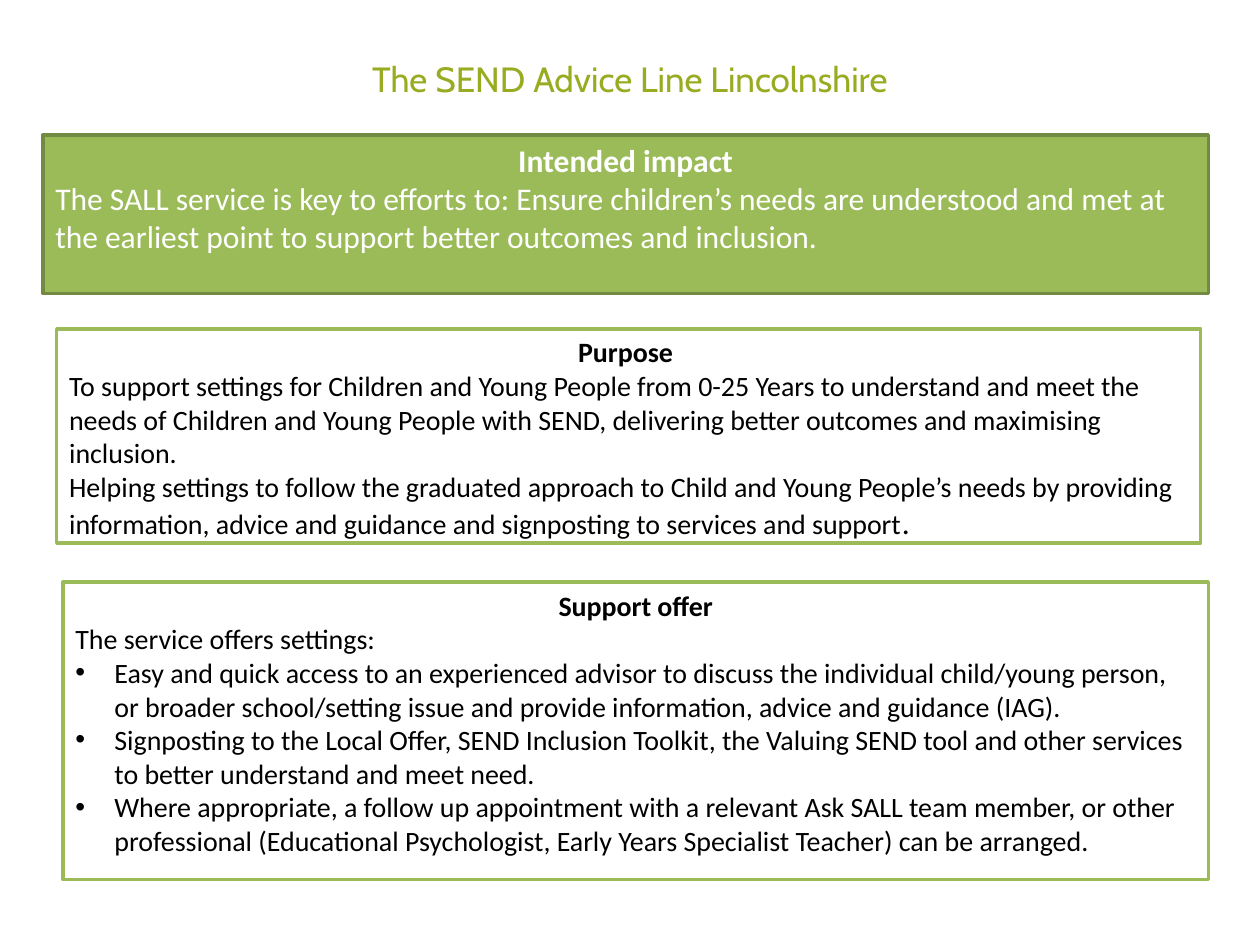
from lxml.etree import SubElement
from pptx import Presentation
from pptx.dml.color import RGBColor
from pptx.enum.shapes import MSO_SHAPE
from pptx.enum.text import MSO_ANCHOR, PP_ALIGN
from pptx.oxml.ns import qn
from pptx.util import Inches, Pt

# Content
TITLE = "The SEND Advice Line Lincolnshire"
GREEN, DARK_GREEN, TITLE_GREEN = "9BBB59", "738A42", "99AB21"
WHITE, BLACK = "FFFFFF", "000000"
BULLET_INDENT = 0.31

PANELS = [
    {
        "box": (0.45, 2.61, 9.08, 1.7), "fill": WHITE, "line": GREEN,
        "color": BLACK, "size": 16, "heading": "Purpose ",
        "body": [
            "To support settings for Children and Young People from 0-25 Years to "
            "understand and meet the needs of Children and Young People with SEND, "
            "delivering better outcomes and maximising inclusion.",
            "Helping settings to follow the graduated approach to Child and Young "
            "People’s needs by providing information, advice and guidance and "
            "signposting to services and support",
        ],
        "ending": (".", 18),
        "bullets": [],
    },
    {
        "box": (0.5, 4.62, 9.09, 2.36), "fill": WHITE, "line": GREEN,
        "color": BLACK, "size": 16, "heading": "Support offer",
        "body": ["The service offers settings:"],
        "bullets": [
            "Easy and quick access to an experienced advisor to discuss the "
            "individual child/young person, or broader school/setting issue and "
            "provide information, advice and guidance (IAG).",
            "Signposting to the Local Offer, SEND Inclusion Toolkit, the Valuing "
            "SEND tool and other services to better understand and meet need.",
            "Where appropriate, a follow up appointment with a relevant Ask SALL "
            "team member, or other professional (Educational Psychologist, Early "
            "Years Specialist Teacher) can be arranged.",
        ],
    },
    {
        "box": (0.34, 1.07, 9.25, 1.26), "fill": GREEN, "line": DARK_GREEN,
        "color": WHITE, "size": 18, "heading": "Intended impact",
        "body": [
            "The SALL service is key to efforts to: Ensure children’s needs are "
            "understood and met at the earliest point to support better outcomes "
            "and inclusion.",
        ],
        "bullets": [],
    },
]


def rgb(value):
    return RGBColor.from_string(value)


def add_run(paragraph, text, *, size, color, font="Calibri", bold=False):
    run = paragraph.add_run()
    run.text = text
    run.font.name = font
    run.font.size = Pt(size)
    run.font.bold = bold
    run.font.color.rgb = rgb(color)


def add_text(frame, text, *, align=PP_ALIGN.LEFT, bullet=False, **run_format):
    """Fill the first paragraph if it is free, otherwise append one."""
    paragraph = frame.paragraphs[0]
    if paragraph.runs:
        paragraph = frame.add_paragraph()
    paragraph.alignment = align
    if bullet:
        properties = paragraph._p.get_or_add_pPr()
        properties.set("marL", str(Inches(BULLET_INDENT)))
        properties.set("indent", str(-Inches(BULLET_INDENT)))
        SubElement(properties, qn("a:buFont")).set("typeface", "Arial")
        SubElement(properties, qn("a:buChar")).set("char", "•")
    add_run(paragraph, text, **run_format)
    return paragraph


def add_panel(slide, panel):
    shape = slide.shapes.add_shape(MSO_SHAPE.RECTANGLE, *map(Inches, panel["box"]))
    shape.shadow.inherit = False
    shape.fill.solid()
    shape.fill.fore_color.rgb = rgb(panel["fill"])
    shape.line.color.rgb = rgb(panel["line"])
    shape.line.width = Pt(2)

    frame = shape.text_frame
    frame.word_wrap = True
    frame.vertical_anchor = MSO_ANCHOR.TOP
    style = {"size": panel["size"], "color": panel["color"]}
    add_text(frame, panel["heading"], align=PP_ALIGN.CENTER, bold=True, **style)
    for text in panel["body"]:
        paragraph = add_text(frame, text, **style)
    if "ending" in panel:
        text, size = panel["ending"]
        add_run(paragraph, text, size=size, color=panel["color"])
    for text in panel["bullets"]:
        add_text(frame, text, bullet=True, **style)


def main():
    presentation = Presentation()
    presentation.slide_width = Inches(10)
    presentation.slide_height = Inches(7.5)
    slide = presentation.slides.add_slide(presentation.slide_layouts[6])

    # Title
    title = slide.shapes.add_textbox(Inches(0.5), 0, Inches(9), Inches(1.25))
    title.text_frame.word_wrap = True
    title.text_frame.vertical_anchor = MSO_ANCHOR.MIDDLE
    add_text(title.text_frame, TITLE, align=PP_ALIGN.CENTER,
             size=20, color=TITLE_GREEN, font="Cabin")

    # Panels
    for panel in PANELS:
        add_panel(slide, panel)

    presentation.save("out.pptx")


if __name__ == "__main__":
    main()
